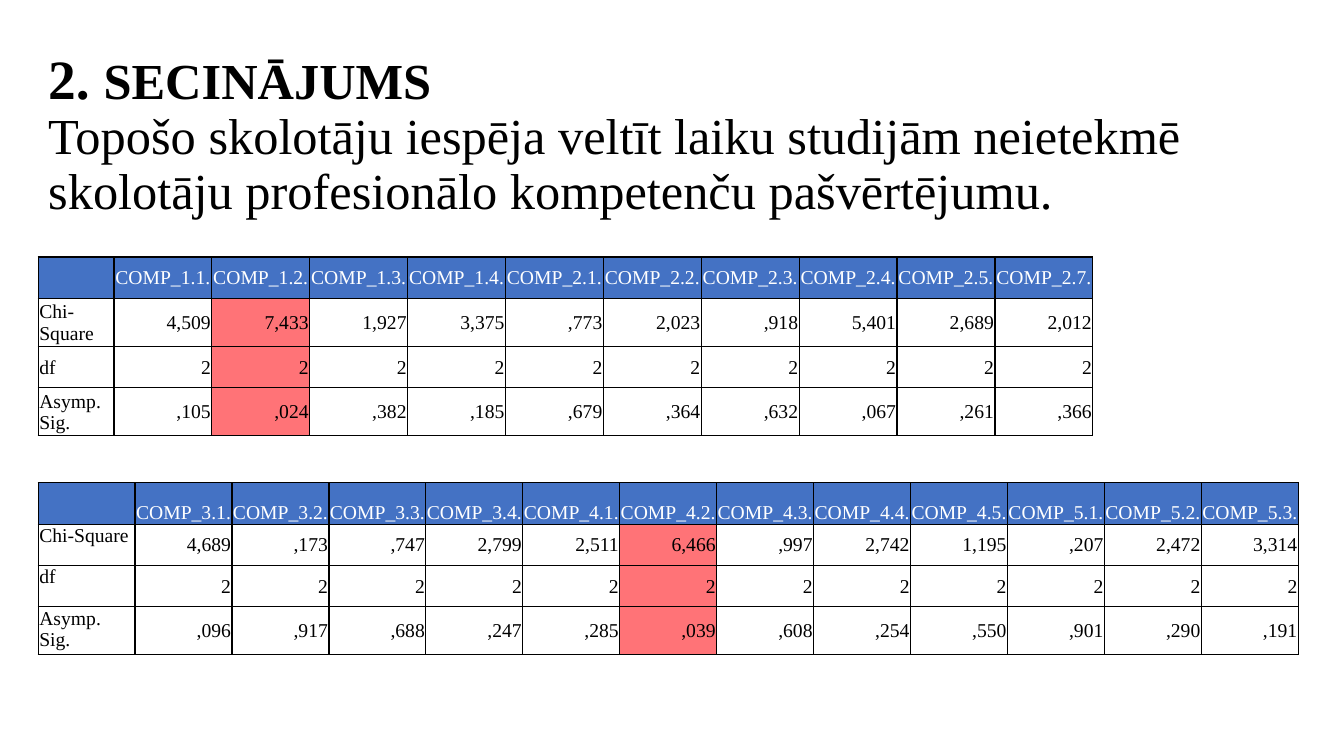
from dataclasses import dataclass

from lxml.etree import SubElement
from pptx import Presentation
from pptx.dml.color import RGBColor
from pptx.enum.text import MSO_ANCHOR, PP_ALIGN
from pptx.oxml.ns import qn
from pptx.util import Inches, Pt

FONT = "Times New Roman"
BLACK = RGBColor(0x00, 0x00, 0x00)
WHITE = RGBColor(0xFF, 0xFF, 0xFF)
BLUE = RGBColor(0x44, 0x72, 0xC4)
RED = RGBColor(0xFF, 0x73, 0x77)

LEFT = 0.38
ROW = 0.41
INSET = 0.01


@dataclass
class Grid:
    top: float
    first: float  # width of the label column
    width: float  # width of the whole table
    mark: int  # column shown in red
    head: MSO_ANCHOR
    label: MSO_ANCHOR
    codes: list[str]
    chi: list[str]
    sig: list[str]

    def rows(self) -> list[list[str]]:
        return [
            [""] + [f"COMP_{code}." for code in self.codes],
            ["Chi-Square"] + self.chi,
            ["df"] + ["2"] * len(self.codes),
            ["Asymp. Sig."] + self.sig,
        ]


GRIDS = [
    Grid(2.55, 0.75, 10.46, 2, MSO_ANCHOR.MIDDLE, MSO_ANCHOR.MIDDLE,
         "1.1 1.2 1.3 1.4 2.1 2.2 2.3 2.4 2.5 2.7".split(),
         "4,509 7,433 1,927 3,375 ,773 2,023 ,918 5,401 2,689 2,012".split(),
         ",105 ,024 ,382 ,185 ,679 ,364 ,632 ,067 ,261 ,366".split()),
    Grid(4.79, 0.96, 12.5, 6, MSO_ANCHOR.BOTTOM, MSO_ANCHOR.TOP,
         "3.1 3.2 3.3 3.4 4.1 4.2 4.3 4.4 4.5 5.1 5.2 5.3".split(),
         "4,689 ,173 ,747 2,799 2,511 6,466 ,997 2,742 1,195 ,207 2,472 3,314".split(),
         ",096 ,917 ,688 ,247 ,285 ,039 ,608 ,254 ,550 ,901 ,290 ,191".split()),
]


def add_title(slide) -> None:
    box = slide.shapes.add_textbox(Inches(LEFT), Inches(0.62), Inches(12.84), Inches(1.45))
    frame = box.text_frame
    frame.word_wrap = True
    frame.vertical_anchor = MSO_ANCHOR.MIDDLE
    para = frame.paragraphs[0]
    para.line_spacing = 0.9
    para.font.name = FONT
    para.font.color.rgb = BLACK
    parts = [
        ("2. ", 39.6, True),
        ("SECINĀJUMS ", 36, True),
        ("Topošo skolotāju iespēja veltīt laiku studijām neietekmē "
         "skolotāju profesionālo kompetenču pašvērtējumu.", 36, False),
    ]
    for text, size, bold in parts:
        if not bold:
            para.add_line_break()
        run = para.add_run()
        run.text = text
        run.font.name = FONT
        run.font.size = Pt(size)
        run.font.bold = bold
        run.font.color.rgb = BLACK


def add_edges(cell) -> None:
    props = cell._tc.get_or_add_tcPr()
    for spot, side in enumerate(("lnL", "lnR", "lnT", "lnB")):
        line = SubElement(props, qn(f"a:{side}"), w=str(Pt(1)))
        fill = SubElement(line, qn("a:solidFill"))
        SubElement(fill, qn("a:srgbClr"), val=str(BLACK))
        props.insert(spot, line)


def fill_cell(cell, text: str, row: int, col: int, grid: Grid) -> None:
    # Text
    cell.text = text
    side = INSET if row else 0
    cell.margin_left = cell.margin_right = Inches(side)
    cell.margin_top = Inches(INSET)
    cell.margin_bottom = 0
    para = cell.text_frame.paragraphs[0]
    para.font.name = FONT
    para.font.size = Pt(14)
    para.font.bold = False
    para.font.color.rgb = BLACK if row else WHITE

    # Place and fill
    if row == 0:
        para.alignment = PP_ALIGN.CENTER
        cell.vertical_anchor = grid.head
    elif col == 0:
        para.alignment = PP_ALIGN.LEFT
        cell.vertical_anchor = grid.label
    else:
        para.alignment = PP_ALIGN.RIGHT
        cell.vertical_anchor = MSO_ANCHOR.MIDDLE
    if row == 0 or col == grid.mark:
        cell.fill.solid()
        cell.fill.fore_color.rgb = RED if row else BLUE
    else:
        cell.fill.background()
    add_edges(cell)


def add_grid(slide, grid: Grid) -> None:
    rows = grid.rows()
    count = len(rows[0])
    table = slide.shapes.add_table(
        len(rows), count, Inches(LEFT), Inches(grid.top),
        Inches(grid.width), Inches(ROW * len(rows))).table
    table.horz_banding = False
    step = (grid.width - grid.first) / (count - 1)
    for col, column in enumerate(table.columns):
        column.width = Inches(step if col else grid.first)
    for row, texts in enumerate(rows):
        table.rows[row].height = Inches(ROW)
        for col, text in enumerate(texts):
            fill_cell(table.cell(row, col), text, row, col, grid)


def main() -> None:
    deck = Presentation()
    deck.slide_width = Inches(13.33)
    deck.slide_height = Inches(7.5)
    slide = deck.slides.add_slide(deck.slide_layouts[6])
    add_title(slide)
    for grid in GRIDS:
        add_grid(slide, grid)
    deck.save("out.pptx")


if __name__ == "__main__":
    main()
